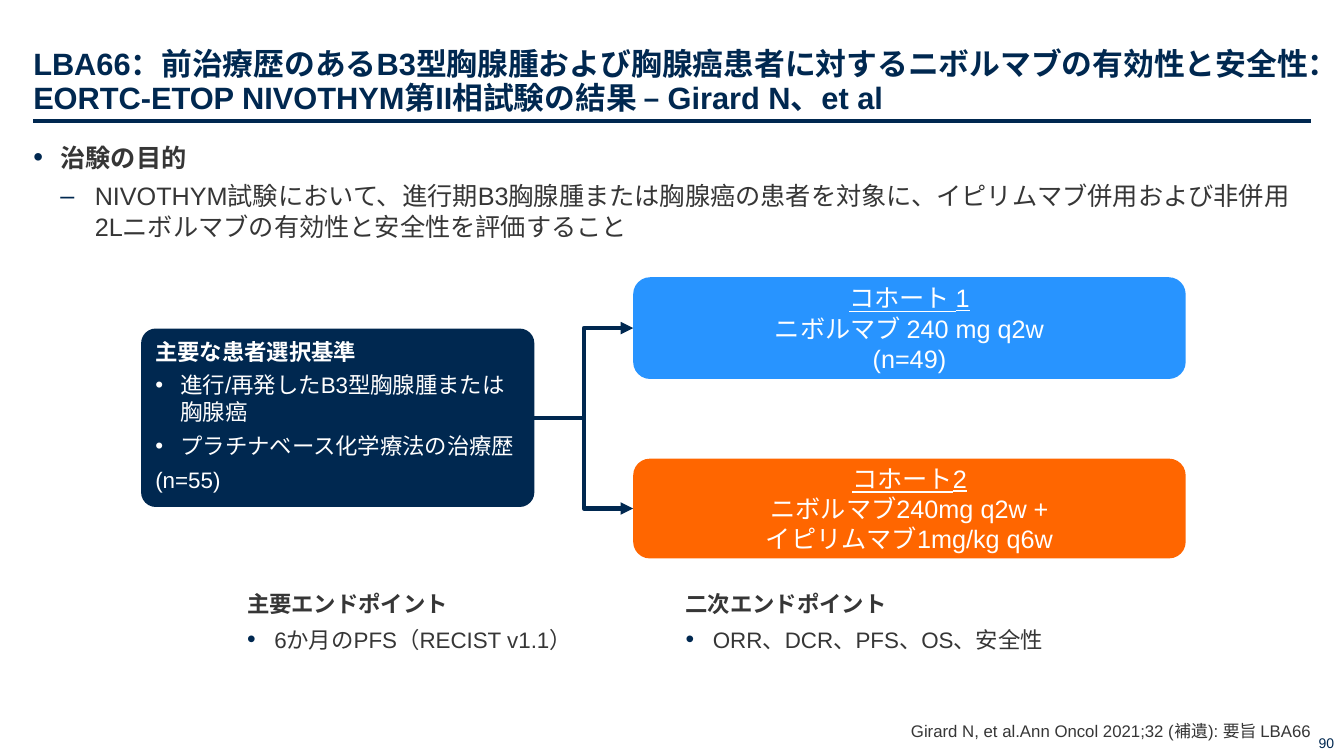
from lxml.etree import SubElement
from pptx import Presentation
from pptx.dml.color import RGBColor
from pptx.enum.shapes import MSO_CONNECTOR, MSO_SHAPE
from pptx.enum.text import MSO_ANCHOR as Anchor, MSO_AUTO_SIZE, PP_ALIGN as Align
from pptx.oxml.ns import qn
from pptx.util import Pt

PX = 9144  # EMU per px, 100 px to the inch
COLORS = {"navy": "002850", "text": "363636", "white": "FFFFFF",
          "blue": "2894FF", "orange": "FF6600"}
LEFT_SITE, RIGHT_SITE = 1, 3


def color(name):
    return RGBColor.from_string(COLORS[name])


class SlideBuilder:
    font_name = "Arial"

    def __init__(self, slide):
        self.slide = slide

    def place(self, shape, box):
        shape.left, shape.top, shape.width, shape.height = [v * PX for v in box]

    def frame(self, shape, insets=(0, 0, 0, 0), anchor=Anchor.TOP):
        frame = shape.text_frame
        frame.word_wrap = True
        frame.auto_size = MSO_AUTO_SIZE.NONE
        frame.vertical_anchor = anchor
        (frame.margin_left, frame.margin_top,
         frame.margin_right, frame.margin_bottom) = [v * PX for v in insets]
        return frame

    def bullet(self, paragraph, char, margin, hanging, ink, percent):
        props = paragraph._p.get_or_add_pPr()
        props.set("marL", str(margin * PX))
        props.set("indent", str(-hanging * PX))
        if not char:
            SubElement(props, qn("a:buNone"))
            return
        tint = SubElement(props, qn("a:buClr"))
        SubElement(tint, qn("a:srgbClr"), val=COLORS[ink])
        SubElement(props, qn("a:buSzPct"), val=str(percent * 1000))
        SubElement(props, qn("a:buFont"), typeface=self.font_name)
        SubElement(props, qn("a:buChar"), char=char)

    def paragraph(self, frame, text, size, ink="text", bold=False, underline=False,
                  align=Align.LEFT, after=0, spacing=1.0, level=0, char=None,
                  margin=0, hanging=0, bullet_ink="navy", percent=100):
        first = frame.paragraphs[0]
        paragraph = frame.add_paragraph() if first.runs else first
        paragraph.text = text
        paragraph.level = level
        paragraph.alignment = align
        paragraph.line_spacing = spacing
        paragraph.space_before, paragraph.space_after = Pt(0), Pt(after)
        self.bullet(paragraph, char, margin, hanging, bullet_ink, percent)
        font = paragraph.font
        font.name, font.size = self.font_name, Pt(size)
        font.bold, font.underline = bold, underline
        font.color.rgb = color(ink)

    def placeholder(self, index, box, **frame_style):
        shape = self.slide.placeholders[index]
        self.place(shape, box)
        return self.frame(shape, **frame_style)

    def text_box(self, box, **frame_style):
        shape = self.slide.shapes.add_textbox(*[v * PX for v in box])
        return self.frame(shape, **frame_style)

    def card(self, box, fill, radius, **frame_style):
        shape = self.slide.shapes.add_shape(
            MSO_SHAPE.ROUNDED_RECTANGLE, *[v * PX for v in box])
        shape.adjustments[0] = radius
        shape.shadow.inherit = False
        shape.fill.solid()
        shape.fill.fore_color.rgb = color(fill)
        shape.line.fill.background()
        self.frame(shape, **frame_style)
        return shape

    def line(self, kind, start, end, width):
        connector = self.slide.shapes.add_connector(kind, *start, *end)
        connector.line.color.rgb = color("navy")
        connector.line.width = Pt(width)
        SubElement(connector._element.spPr, qn("a:effectLst"))
        return connector

    def arrow(self, source, target):
        start = source.left + source.width, source.top + source.height // 2
        end = target.left, target.top + target.height // 2
        connector = self.line(MSO_CONNECTOR.ELBOW, start, end, 3)
        connector.begin_connect(source, RIGHT_SITE)
        connector.end_connect(target, LEFT_SITE)
        SubElement(connector.line._get_or_add_ln(), qn("a:tailEnd"), type="triangle")


def main():
    deck = Presentation()
    deck.slide_width, deck.slide_height = 1333 * PX, 750 * PX
    two_content = deck.slide_layouts[3]
    page = SlideBuilder(deck.slides.add_slide(two_content))

    # Title and rule
    title = page.placeholder(0, (33, 12, 1267, 103), insets=(0, 5, 0, 0),
                             anchor=Anchor.BOTTOM)
    page.paragraph(title, "LBA66：前治療歴のあるB3型胸腺腫および胸腺癌患者に対するニボルマブの"
                   "有効性と安全性：EORTC-ETOP NIVOTHYM第II相試験の結果 – Girard N、et al",
                   22, "navy", bold=True, spacing=0.9)
    page.line(MSO_CONNECTOR.STRAIGHT, (33 * PX, 120 * PX), (1300 * PX, 120 * PX), 2.25)

    # Study objective
    objective = page.placeholder(1, (33, 136, 1267, 553), insets=(0, 5, 0, 5))
    page.paragraph(objective, "治験の目的", 18, bold=True, after=6, char="•",
                   margin=27, hanging=27, percent=110)
    page.paragraph(objective, "NIVOTHYM試験において、進行期B3胸腺腫または胸腺癌の患者を対象に、"
                   "イピリムマブ併用および非併用2Lニボルマブの有効性と安全性を評価すること",
                   18, after=6, level=1, char="–", margin=61, hanging=34)

    # Selection criteria
    criteria = page.card((140, 326, 390, 177), "navy", 0.082, insets=(10, 5, 10, 5))
    criteria_style = {"size": 16, "ink": "white", "after": 5}
    page.paragraph(criteria.text_frame, "主要な患者選択基準", bold=True, **criteria_style)
    for criterion in ("進行/再発したB3型胸腺腫または胸腺癌", "プラチナベース化学療法の治療歴"):
        page.paragraph(criteria.text_frame, criterion, char="•", margin=25, hanging=25,
                       bullet_ink="white", **criteria_style)
    page.paragraph(criteria.text_frame, "(n=55)", **criteria_style)

    # Cohorts and the arrows to them
    cohorts = [
        (275, 101, "blue", "コホート 1", ["ニボルマブ 240 mg q2w", "(n=49)"]),
        (455, 99, "orange", "コホート2", ["ニボルマブ240mg q2w +\vイピリムマブ1mg/kg q6w"]),
    ]
    for top, height, fill, heading, regimen in cohorts:
        cohort = page.card((628, top, 548, height), fill, 0.167,
                           insets=(10, 0, 10, 0), anchor=Anchor.MIDDLE)
        for text in [heading, *regimen]:
            page.paragraph(cohort.text_frame, text, 18, "white",
                           underline=text == heading, align=Align.CENTER)
        page.arrow(criteria, cohort)

    # Endpoints
    endpoints = [
        (245, 361, "主要エンドポイント", "6か月のPFS（RECIST v1.1）"),
        (680, 496, "二次エンドポイント", "ORR、DCR、PFS、OS、安全性"),
    ]
    for left, width, heading, measure in endpoints:
        endpoint = page.text_box((left, 581, width, 80), insets=(0, 5, 0, 5))
        page.paragraph(endpoint, heading, 16, bold=True, after=6)
        page.paragraph(endpoint, measure, 16, after=6, char="•", margin=27,
                       hanging=27, percent=110)

    # Citation and page number
    citation = page.placeholder(2, (698, 713, 602, 22), anchor=Anchor.BOTTOM)
    page.paragraph(citation, "Girard N, et al.Ann Oncol 2021;32 (補遺): 要旨 LBA66", 12,
                   align=Align.RIGHT)
    number = page.text_box((1268, 710, 65, 40), insets=(10, 5, 10, 5),
                           anchor=Anchor.BOTTOM)
    page.paragraph(number, "90", 10, "navy", align=Align.RIGHT)

    deck.save("out.pptx")


if __name__ == "__main__":
    main()
